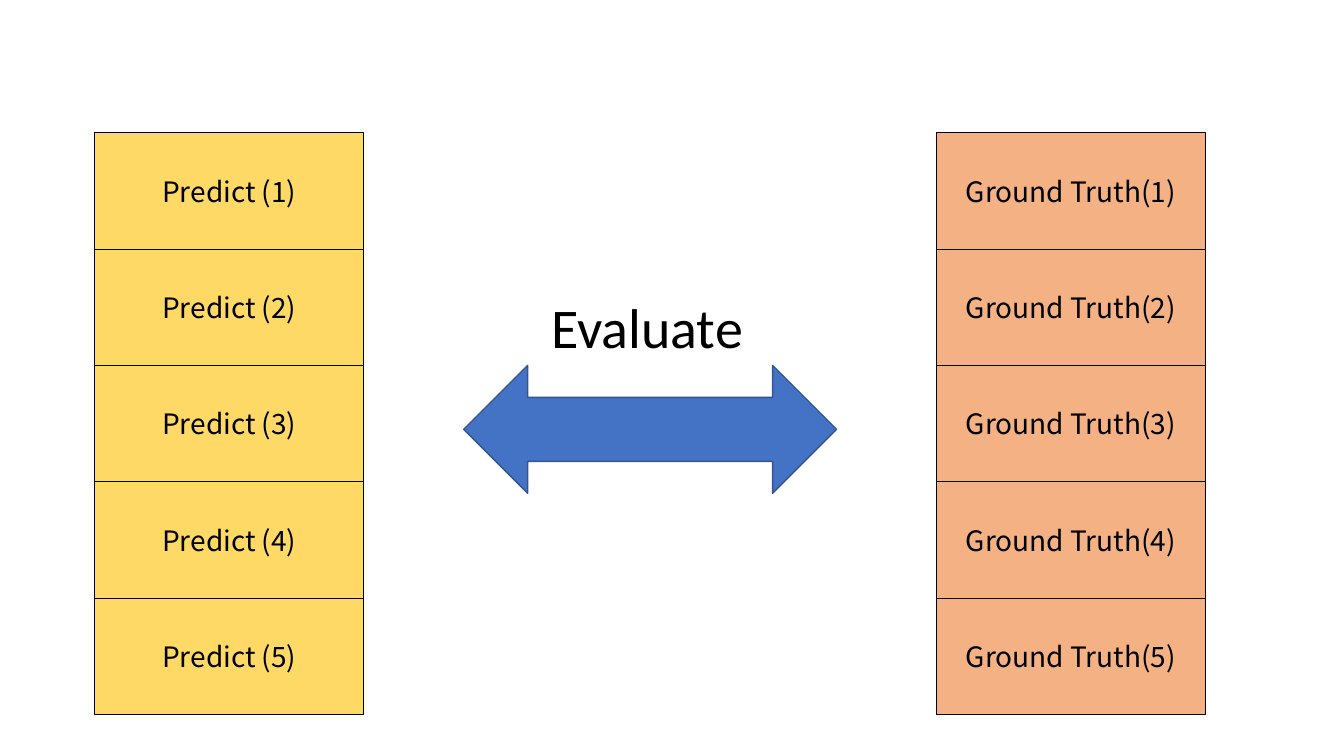
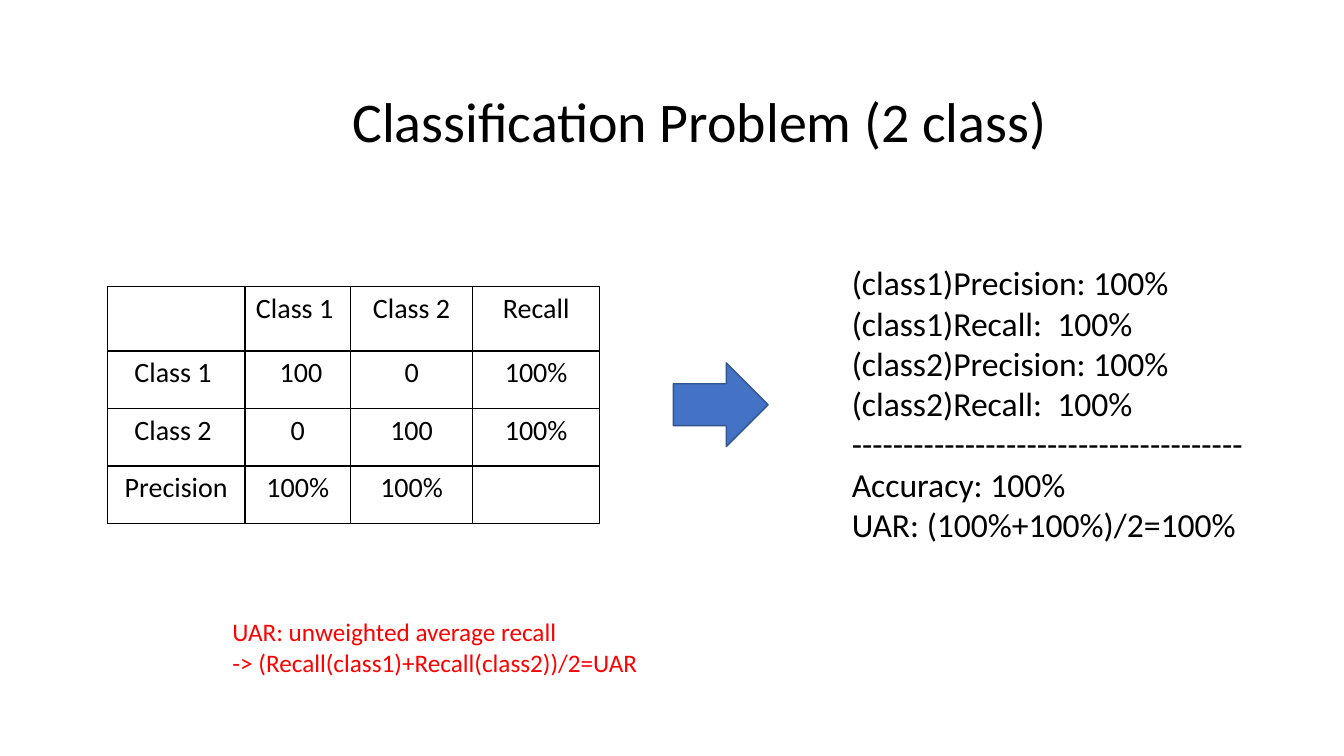
from lxml import etree
from pptx import Presentation
from pptx.dml.color import RGBColor
from pptx.enum.shapes import MSO_SHAPE
from pptx.enum.text import MSO_ANCHOR, MSO_AUTO_SIZE, PP_ALIGN
from pptx.oxml.ns import qn
from pptx.util import Pt

RECTANGLE = MSO_SHAPE.RECTANGLE
TWO_WAY_ARROW = MSO_SHAPE.LEFT_RIGHT_ARROW
RIGHT_ARROW = MSO_SHAPE.RIGHT_ARROW
LEFT, CENTER = PP_ALIGN.LEFT, PP_ALIGN.CENTER
TOP, MIDDLE = MSO_ANCHOR.TOP, MSO_ANCHOR.MIDDLE
NO_AUTOFIT = MSO_AUTO_SIZE.NONE
TITLE_AND_CONTENT, TITLE_ONLY = 1, 5

COLORS = {
    "text": "000000",
    "note": "FF0000",
    "predict": "FFD966",
    "truth": "F4B183",
    "arrow": "4472C4",
    "arrow_line": "325491",
    "cell": "FFFFFF",
}
FONT = "Calibri"
BOX_FONT = "Noto Sans CJK TC"

# Content
SAMPLE_COUNT = 5
STACKS = [  # label, fill, left
    ("Predict ({})", "predict", 67.7),
    ("Ground Truth({})", "truth", 668.9),
]
CONFUSION = [
    ["", "Class 1 ", " Class 2 ", "Recall"],
    ["Class 1 ", " 100", "0", "100%"],
    ["Class 2 ", "0", "100", "100%"],
    ["Precision", "100%", "100%", ""],
]
COLUMN_WIDTHS = [98.2, 75.5, 87.1, 90.9]
ROW_HEIGHTS = [46, 41.1, 41.1, 41.1]
RESULTS = [
    "(class1)Precision: 100%",
    "(class1)Recall:  100%",
    "(class2)Precision: 100%",
    "(class2)Recall:  100%",
    "--------------------------------------",
    "Accuracy: 100%",
    "UAR: (100%+100%)/2=100%",
]
NOTE = [
    "UAR: unweighted average recall",
    "-> (Recall(class1)+Recall(class2))/2=UAR",
]


# Shared helpers
def rgb(name):
    return RGBColor.from_string(COLORS[name])


def write(frame, lines, size, color="text", font=FONT, align=LEFT):
    frame.text = "\n".join(lines)
    for paragraph in frame.paragraphs:
        paragraph.alignment = align
        paragraph.space_before = Pt(0)
        paragraph.font.size = Pt(size)
        paragraph.font.name = font
        paragraph.font.color.rgb = rgb(color)


def place(holder, box):
    holder.left, holder.top, holder.width, holder.height = map(Pt, box)
    frame = holder.text_frame
    frame.auto_size = NO_AUTOFIT
    frame.word_wrap = False
    frame.vertical_anchor = TOP
    return frame


def set_title(slide, text, box):
    write(place(slide.shapes.title, box), [text], 40)


def add_block(slide, kind, box, fill, line, line_width):
    block = slide.shapes.add_shape(kind, *map(Pt, box))
    block.shadow.inherit = False
    block.fill.solid()
    block.fill.fore_color.rgb = rgb(fill)
    block.line.color.rgb = rgb(line)
    block.line.width = Pt(line_width)
    return block


def add_arrow(slide, kind, box):
    add_block(slide, kind, box, "arrow", "arrow_line", 1)


def remove_bullets(frame):
    for paragraph in frame.paragraphs:
        properties = paragraph._p.get_or_add_pPr()
        properties.set("marL", "0")
        properties.set("indent", "0")
        etree.SubElement(properties, qn("a:buNone"))


def add_borders(cell):
    properties = cell._tc.get_or_add_tcPr()
    for side in ("lnL", "lnR", "lnT", "lnB"):
        border = etree.SubElement(properties, qn("a:" + side), w=str(Pt(1)))
        fill = etree.SubElement(border, qn("a:solidFill"))
        etree.SubElement(fill, qn("a:srgbClr"), val=COLORS["text"])


# Slide 1: predictions against ground truth
def build_evaluation(deck):
    slide = deck.slides.add_slide(deck.slide_layouts[TITLE_ONLY])
    top, width, height = 94.8, 192.3, 83.15
    for label, fill, left in STACKS:
        for row in range(SAMPLE_COUNT):
            box = (left, top + row * height, width, height)
            sample = add_block(slide, RECTANGLE, box, fill, "text", 0.75)
            frame = sample.text_frame
            frame.vertical_anchor = MIDDLE
            write(frame, [label.format(row + 1)], 20, font=BOX_FONT, align=CENTER)
    set_title(slide, "Evaluate", (386.6, 205.2, 162, 55.4))
    add_arrow(slide, TWO_WAY_ARROW, (331.2, 261, 266.4, 91.4))


# Slide 2: confusion table and its scores
def build_classification(deck):
    slide = deck.slides.add_slide(deck.slide_layouts[TITLE_AND_CONTENT])
    set_title(slide, "Classification Problem (2 class)", (244.4, 58.3, 515.5, 55.4))

    table = slide.shapes.add_table(
        len(ROW_HEIGHTS), len(COLUMN_WIDTHS), Pt(76.8), Pt(204.7),
        Pt(sum(COLUMN_WIDTHS)), Pt(sum(ROW_HEIGHTS))).table
    table.first_row = table.horz_banding = False
    for column, width in zip(table.columns, COLUMN_WIDTHS):
        column.width = Pt(width)
    for row, height, values in zip(table.rows, ROW_HEIGHTS, CONFUSION):
        row.height = Pt(height)
        for cell, value in zip(row.cells, values):
            write(cell.text_frame, [value], 20, align=CENTER)
            add_borders(cell)
            cell.fill.solid()
            cell.fill.fore_color.rgb = rgb("cell")

    add_arrow(slide, RIGHT_ARROW, (481, 259.2, 67.7, 59.8))

    results = place(slide.placeholders[1], (601.2, 183.6, 297.4, 211))
    write(results, RESULTS, 24)
    remove_bullets(results)

    note_box = (159, 437, 306.7, 72.7)
    note = place(slide.shapes.add_textbox(*map(Pt, note_box)), note_box)
    write(note, NOTE, 18, "note")


def main():
    deck = Presentation()
    deck.slide_width, deck.slide_height = Pt(960), Pt(540)
    build_evaluation(deck)
    build_classification(deck)
    deck.save("out.pptx")


if __name__ == "__main__":
    main()
